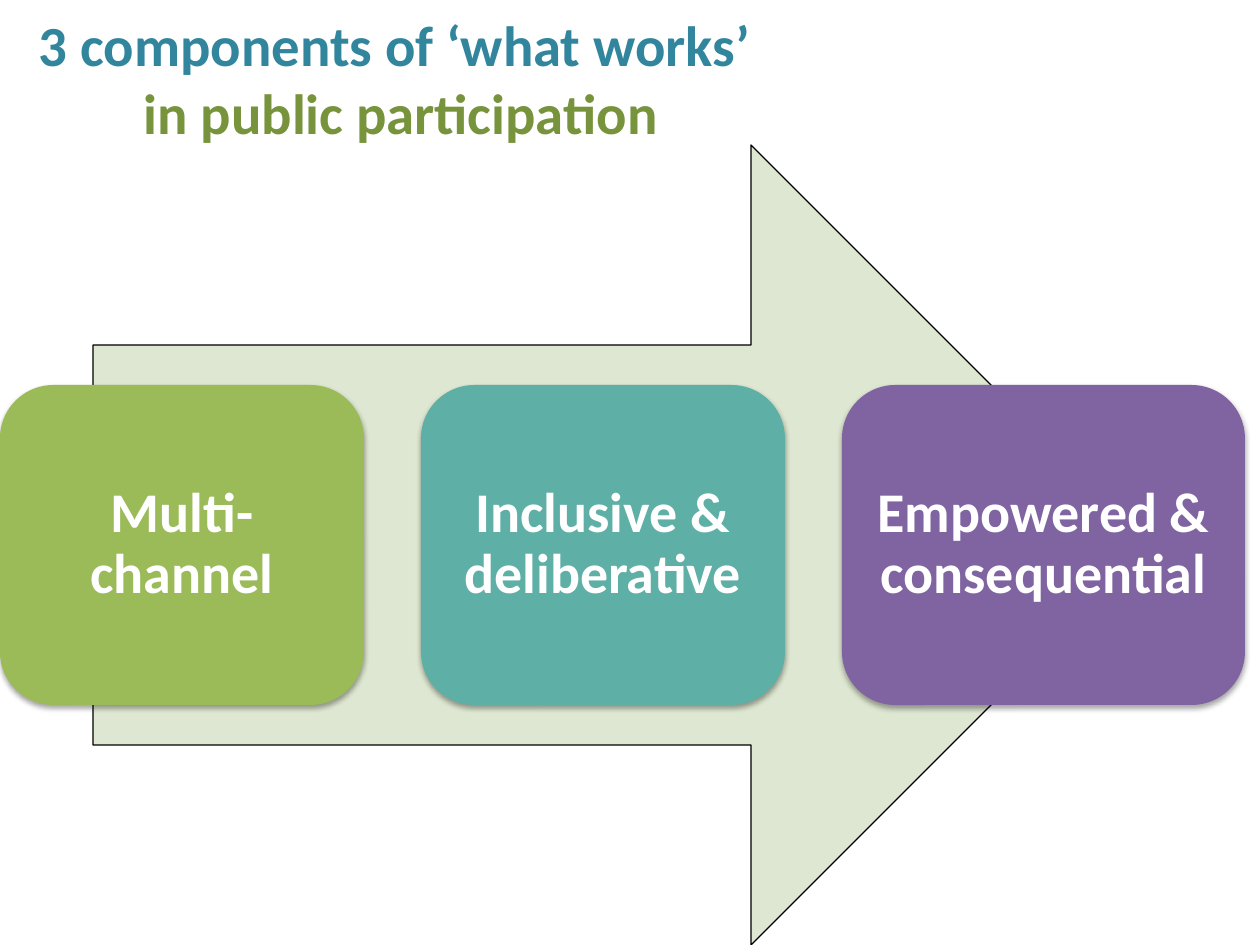
from lxml import etree
from pptx import Presentation
from pptx.dml.color import RGBColor
from pptx.enum import shapes, text
from pptx.oxml import ns
from pptx.util import Pt

SCALE = 914400 / 126
FONT = "Calibri"
COLOURS = {
    "blue": "31859C",
    "olive": "77933C",
    "arrow": "DEE7D1",
    "green": "9BBB59",
    "teal": "5EAFA6",
    "purple": "8064A2",
    "white": "FFFFFF",
    "black": "000000",
}
COMPONENTS = [
    ("Multi-channel", "green", 364),
    ("Inclusive & deliberative", "teal", 364),
    ("Empowered & consequential", "purple", 403),
]


def px(length):
    return round(length * SCALE)


def colour(name):
    return RGBColor.from_string(COLOURS[name])


def format_span(span, size, name):
    span.font.name = FONT
    span.font.size = Pt(size)
    span.font.bold = True
    span.font.color.rgb = colour(name)


def add_filled_shape(page, kind, box, fill):
    shape = page.shapes.add_shape(kind, *map(px, box))
    shape.shadow.inherit = False
    shape.fill.solid()
    shape.fill.fore_color.rgb = colour(fill)
    return shape


def add_soft_shadow(shape):
    effects = shape._element.spPr.find(ns.qn("a:effectLst"))
    shadow = etree.SubElement(
        effects, ns.qn("a:outerShdw"), blurRad=str(Pt(3.1)), dist=str(Pt(1.8)),
        dir="5400000", rotWithShape="0")
    tint = etree.SubElement(shadow, ns.qn("a:srgbClr"), val=COLOURS["black"])
    etree.SubElement(tint, ns.qn("a:alpha"), val="35000")


def add_title(page, box):
    frame = page.shapes.add_textbox(*map(px, box)).text_frame
    frame.word_wrap = True
    frame.vertical_anchor = text.MSO_ANCHOR.MIDDLE
    para = frame.paragraphs[0]
    para.text = "3 components of ‘what works’\v in public participation"
    para.alignment = text.PP_ALIGN.CENTER
    for span, name in zip(para.runs, ("blue", "olive")):
        format_span(span, 32.4, name)


def add_component(page, box, label, fill):
    shape = add_filled_shape(page, shapes.MSO_SHAPE.ROUNDED_RECTANGLE, box, fill)
    shape.line.fill.background()
    add_soft_shadow(shape)
    frame = shape.text_frame
    frame.word_wrap = True
    frame.vertical_anchor = text.MSO_ANCHOR.MIDDLE
    frame.margin_left = frame.margin_right = px(16)
    frame.margin_top = frame.margin_bottom = px(16)
    para = frame.paragraphs[0]
    para.text = label
    para.alignment = text.PP_ALIGN.CENTER
    para.line_spacing = 0.9
    format_span(para.runs[0], 32, "white")


def add_process(page, box):
    left, top, width, height = box
    arrow = add_filled_shape(
        page, shapes.MSO_SHAPE.RIGHT_ARROW, (left + 93, top, width - 187, height), "arrow")
    arrow.line.color.rgb = colour("black")
    arrow.line.width = Pt(0.75)
    card_height = height * 2 // 5
    card_top = top + (height - card_height) // 2
    gap = (width - sum(card[2] for card in COMPONENTS)) // (len(COMPONENTS) - 1)
    for label, fill, card_width in COMPONENTS:
        add_component(page, (left, card_top, card_width, card_height), label, fill)
        left += card_width + gap


def main():
    deck = Presentation()
    deck.slide_width, deck.slide_height = px(1260), px(945)
    page = deck.slides.add_slide(deck.slide_layouts[6])
    add_title(page, (0, 10, 789, 136))
    add_process(page, (0, 145, 1245, 800))
    deck.save("out.pptx")


if __name__ == "__main__":
    main()
